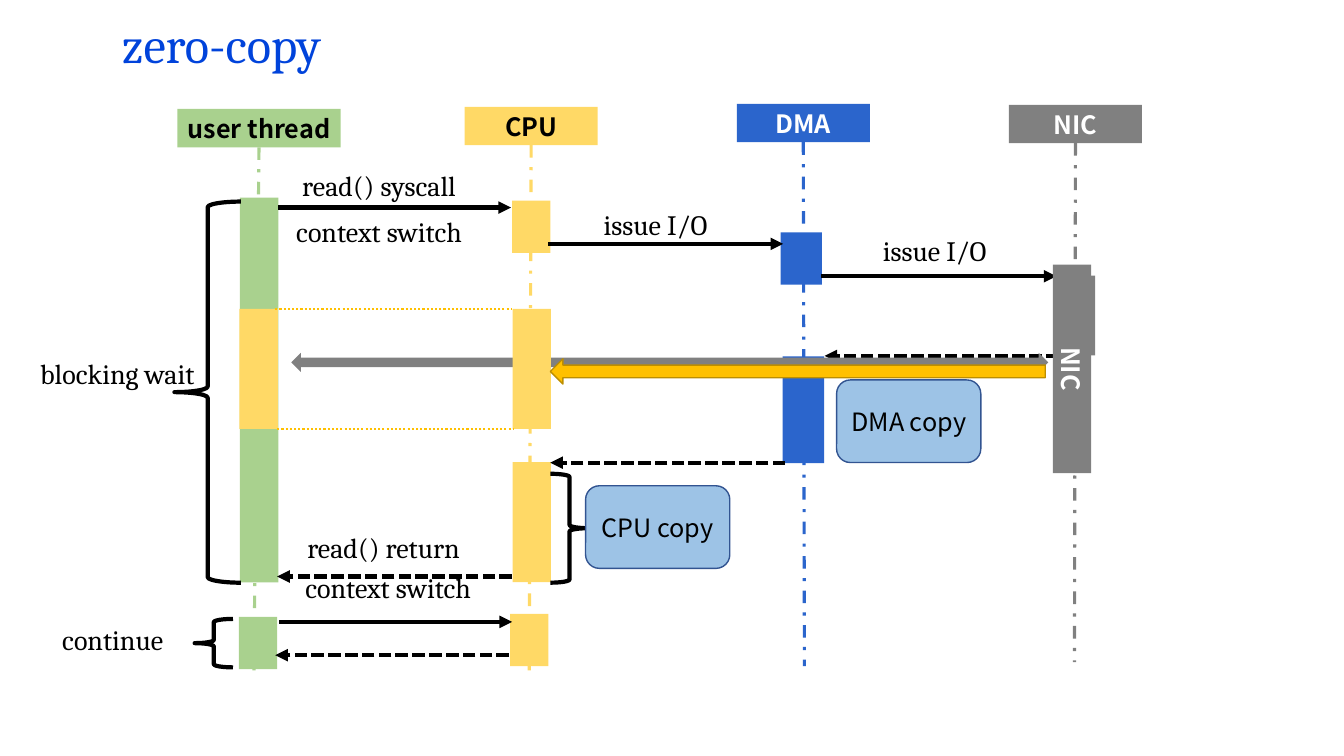
from lxml.etree import SubElement
from pptx import Presentation
from pptx.dml.color import RGBColor
from pptx.enum.dml import MSO_LINE
from pptx.enum.shapes import MSO_CONNECTOR, MSO_SHAPE
from pptx.enum.text import MSO_ANCHOR, MSO_AUTO_SIZE, PP_ALIGN
from pptx.oxml.ns import qn
from pptx.util import Pt

BLACK = RGBColor(0x00, 0x00, 0x00)
WHITE = RGBColor(0xFF, 0xFF, 0xFF)
TITLE_BLUE = RGBColor(0x00, 0x43, 0xDB)
GREEN = RGBColor(0xA9, 0xD1, 0x8E)
YELLOW = RGBColor(0xFF, 0xD9, 0x66)
BLUE = RGBColor(0x2B, 0x65, 0xCC)
GRAY = RGBColor(0x80, 0x80, 0x80)
LIGHT_BLUE = RGBColor(0x9D, 0xC3, 0xE6)
NOTE_BORDER = RGBColor(0x32, 0x54, 0x91)
ORANGE = RGBColor(0xFF, 0xC0, 0x00)
DARK_ORANGE = RGBColor(0xBD, 0x8E, 0x00)

SERIF = "Cambria"
SANS = "Noto Sans CJK SC"
BAR_WIDTH = 27.4
DMA_WIDTH = 29.5
SHORT_BAR = 37.4
COPY_BAR = 85.7
COPY_TOP = 220.7

LANES = [
    ("user thread", 126.7, 77.8, 116.6, GREEN, BLACK, 181.4, 478.8),
    ("CPU", 331.9, 76.3, 95, YELLOW, BLACK, 378, 478.8),
    ("DMA", 526.3, 74.2, 95, BLUE, WHITE, 574.6, 475.9),
    ("NIC", 720.7, 74.9, 95, GRAY, WHITE, 767.5, 473),
]
ACTIVITY_BARS = [
    (557.6, 166, DMA_WIDTH, SHORT_BAR, BLUE),
    (559.1, 254.5, DMA_WIDTH, 76.3, BLUE),
    (754.9, 196.9, BAR_WIDTH, 56.9, GRAY),
    (365.8, 143.3, BAR_WIDTH, SHORT_BAR, YELLOW),
    (366.1, 330.1, BAR_WIDTH, COPY_BAR, YELLOW),
    (171.4, 141.1, BAR_WIDTH, 275, GREEN),
    (170.6, 440.6, BAR_WIDTH, SHORT_BAR, GREEN),
    (364.3, 438.5, BAR_WIDTH, SHORT_BAR, YELLOW),
]
CALLS = [
    (198.7, 365, 148.3),
    (391.7, 559.4, 174.2),
    (586.8, 754.6, 197.3),
    (199.4, 365.8, 444.2),
]
RETURNS = [
    (756, 589, 254.2),
    (560.9, 393.1, 330.5),
    (365.8, 198, 411.8),
    (363.6, 196.6, 468),
]
BRACES = [
    (MSO_SHAPE.LEFT_BRACE, 124.6, 144, 47.5, 272.2),
    (MSO_SHAPE.LEFT_BRACE, 139, 442.1, 27.4, 34.6),
    (MSO_SHAPE.RIGHT_BRACE, 393.1, 338.4, 27.4, 77.8),
]
LABELS = [
    ("blocking wait", 21.6, 251.3, 138.2),
    ("continue", 37.4, 441.4, 112.3),
    ("read() syscall", 208.8, 116.6, 140.4),
    ("context switch", 204.5, 149.8, 178.6),
    ("issue I/O", 424.1, 144.7, 105.8),
    ("issue I/O", 623.5, 163.4, 105.8),
    ("read() return", 212.4, 375.1, 140.4),
    ("context switch", 211, 403.9, 178.6),
]
NOTES = [("DMA copy", 597.6, 271.4), ("CPU copy", 418.3, 347)]


def write_text(shape, text, *, font=SERIF, size=20, color=BLACK, bold=False,
               align=PP_ALIGN.LEFT, anchor=MSO_ANCHOR.TOP):
    """Put formatted text into a shape."""
    frame = shape.text_frame
    frame.word_wrap = True
    frame.auto_size = MSO_AUTO_SIZE.NONE
    frame.vertical_anchor = anchor
    paragraph = frame.paragraphs[0]
    paragraph.alignment = align
    run = paragraph.add_run()
    run.text = text
    run.font.name = font
    run.font.size = Pt(size)
    run.font.bold = bold
    run.font.color.rgb = color


def add_block(slide, kind, left, top, width, height, fill=None, border=None, weight=1):
    """Add a preset shape without a shadow."""
    shape = slide.shapes.add_shape(kind, Pt(left), Pt(top), Pt(width), Pt(height))
    shape.shadow.inherit = False
    if fill is None:
        shape.fill.background()
    else:
        shape.fill.solid()
        shape.fill.fore_color.rgb = fill
    if border is None:
        shape.line.fill.background()
    else:
        shape.line.color.rgb = border
        shape.line.width = Pt(weight)
    return shape


def add_bar(slide, left, top, width, height, fill):
    """Add a plain filled rectangle."""
    return add_block(slide, MSO_SHAPE.RECTANGLE, left, top, width, height, fill)


def add_line(slide, start, end, color, weight, dash=MSO_LINE.SOLID, arrow=False):
    """Add a straight connector, with an arrowhead at its end if asked."""
    connector = slide.shapes.add_connector(
        MSO_CONNECTOR.STRAIGHT, *(Pt(length) for length in (*start, *end)))
    connector.line.color.rgb = color
    connector.line.width = Pt(weight)
    connector.line.dash_style = dash
    if arrow:
        SubElement(connector.line._get_or_add_ln(), qn("a:tailEnd"), type="triangle")
    SubElement(connector._element.spPr, qn("a:effectLst"))
    return connector


def add_label(slide, text, left, top, width):
    """Add a free-standing caption."""
    box = slide.shapes.add_textbox(Pt(left), Pt(top), Pt(width), Pt(31.7))
    write_text(box, text)


def add_note(slide, text, left, top):
    """Add a rounded note that names a copy step."""
    note = add_block(slide, MSO_SHAPE.ROUNDED_RECTANGLE, left, top, 103, 59,
                     LIGHT_BLUE, NOTE_BORDER)
    write_text(note, text, font=SANS, size=18, align=PP_ALIGN.CENTER,
               anchor=MSO_ANCHOR.MIDDLE)


def add_header(slide, text, left, top, width, fill, color):
    """Add a bold heading bar."""
    header = add_bar(slide, left, top, width, BAR_WIDTH, fill)
    write_text(header, text, font=SANS, size=18, color=color, bold=True,
               align=PP_ALIGN.CENTER, anchor=MSO_ANCHOR.MIDDLE)
    return header


def add_title(slide, text):
    """Place and fill the title placeholder."""
    title = slide.shapes.title
    title.left, title.top, title.width, title.height = Pt(79.9), Pt(5.8), Pt(860), Pt(51)
    write_text(title, text, size=36, color=TITLE_BLUE)


def main():
    """Build the zero-copy sequence slide."""
    presentation = Presentation()
    presentation.slide_width, presentation.slide_height = Pt(960), Pt(540)
    slide = presentation.slides.add_slide(presentation.slide_layouts[5])
    add_title(slide, "zero-copy")

    for text, left, top, width, fill, color, foot, bottom in LANES:
        header = add_header(slide, text, left, top, width, fill, color)
        lifeline = add_line(slide, (foot, top + BAR_WIDTH), (foot, bottom), fill, 2.25,
                            MSO_LINE.DASH_DOT)
        lifeline.begin_connect(header, 2)
    for bar in ACTIVITY_BARS:
        add_bar(slide, *bar)
    for arrows, dash in ((CALLS, MSO_LINE.SOLID), (RETURNS, MSO_LINE.SQUARE_DOT)):
        for start, end, y in arrows:
            add_line(slide, (start, y), (end, y), BLACK, 3, dash, arrow=True)
    for brace in BRACES:
        add_block(slide, *brace, border=BLACK, weight=3)
    for label in LABELS:
        add_label(slide, *label)
    for note in NOTES:
        add_note(slide, *note)

    add_block(slide, MSO_SHAPE.LEFT_RIGHT_ARROW, 208.1, 252, 540.7, 13.7, GRAY)
    add_header(slide, "NIC", 691.2, 249.8, 149, GRAY, WHITE).rotation = 90
    for left in (366.1, 171):
        add_bar(slide, left, COPY_TOP, BAR_WIDTH, COPY_BAR, YELLOW)
    add_block(slide, MSO_SHAPE.LEFT_ARROW, 393.1, 256.3, 353.5, 18, ORANGE, DARK_ORANGE)
    for start, y in ((196.6, COPY_TOP), (198, COPY_TOP + COPY_BAR)):
        add_line(slide, (start, y), (start + 169.2, y), ORANGE, 1.5, MSO_LINE.ROUND_DOT)

    presentation.save("out.pptx")


if __name__ == "__main__":
    main()
